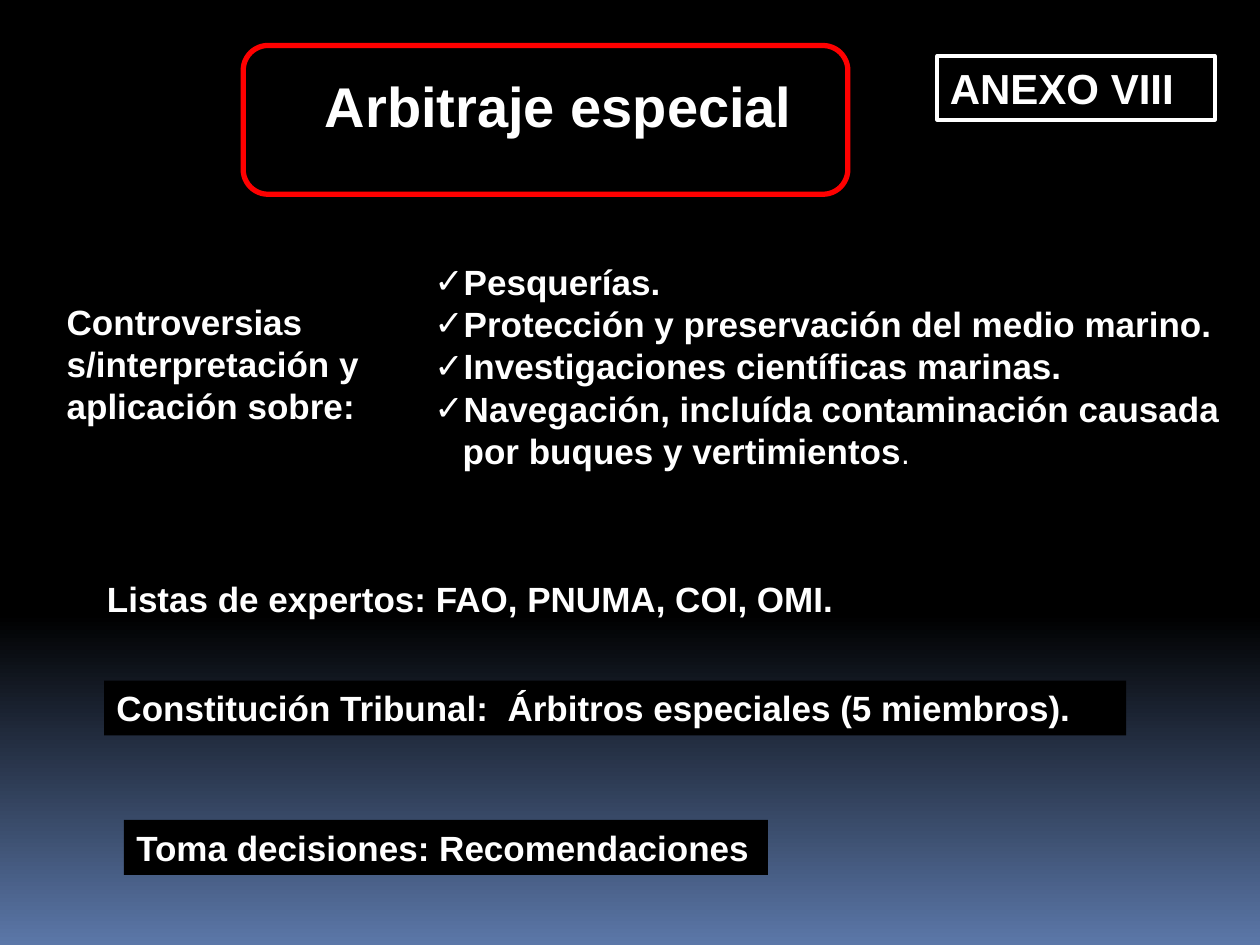
import copy

import pptx
import pptx.dml.color
import pptx.enum.shapes
import pptx.enum.text
import pptx.oxml
import pptx.oxml.ns
import pptx.util

Pt = pptx.util.Pt
SHAPES = pptx.enum.shapes.MSO_SHAPE
WHITE, BLACK, RED = "FFFFFF", "000000", "FF0000"


def color(hex_string):
    return pptx.dml.color.RGBColor.from_string(hex_string)


def format_text(shape, size, wrap=True):
    text_frame = shape.text_frame
    text_frame.word_wrap = wrap
    text_frame.auto_size = pptx.enum.text.MSO_AUTO_SIZE.NONE
    text_frame.vertical_anchor = pptx.enum.text.MSO_ANCHOR.TOP
    for paragraph in text_frame.paragraphs:
        paragraph.alignment = pptx.enum.text.PP_ALIGN.LEFT
        paragraph.space_before = Pt(0)
        for run in paragraph.runs:
            run.font.name = "Arial"
            run.font.size = Pt(size)
            run.font.bold = True
            run.font.color.rgb = color(WHITE)


presentation = pptx.Presentation()
presentation.slide_width, presentation.slide_height = Pt(720), Pt(540)
slide = presentation.slides.add_slide(presentation.slide_layouts[1])

# Background: black down to 65 %, then fading to blue
fill = slide.background.fill
fill.gradient()
fill.gradient_angle = 270
stop_list = slide.element.find(".//" + pptx.oxml.ns.qn("a:gsLst"))
stop_list.insert(1, copy.deepcopy(stop_list[0]))
for stop, (position, hex_string) in zip(
        fill.gradient_stops, [(0, BLACK), (0.65, BLACK), (1, "5B77A8")]):
    stop.position = position
    stop.color.rgb = color(hex_string)

# Title
title = slide.shapes.title
title.left, title.top, title.width, title.height = Pt(178.5), Pt(37.5), Pt(294.5), Pt(46)
title.text_frame.text = "Arbitraje especial"
format_text(title, 32)

# List of subjects
subjects = [
    "Pesquerías.",
    "Protección y preservación del medio marino.",
    "Investigaciones científicas marinas.",
    "Navegación, incluída contaminación causada",
    "por buques y vertimientos",
]
body = slide.placeholders[1]
body.left, body.top, body.width, body.height = Pt(241), Pt(145.5), Pt(479), Pt(127.5)
body.fill.solid()
body.fill.fore_color.rgb = color(BLACK)
body.text_frame.text = "\n".join(subjects)
body.text_frame.paragraphs[-1].add_run().text = "."
format_text(body, 20)
full_stop = body.text_frame.paragraphs[-1].runs[-1]
full_stop.font.size = Pt(18)
full_stop.font.bold = False

# Check marks; the last line continues the fourth item without one
namespace = pptx.oxml.ns.nsdecls("a")
for index, paragraph in enumerate(body.text_frame.paragraphs):
    properties = paragraph._p.get_or_add_pPr()
    properties.set("marL", str(Pt(16.2)))
    if index < len(subjects) - 1:
        properties.set("indent", str(-Pt(16.2)))
        bullet = f'<a:buChar {namespace} char="✓"/>'
    else:
        properties.set("indent", "0")
        bullet = f"<a:buNone {namespace}/>"
    properties.append(pptx.oxml.parse_xml(bullet))

# Frame around the title, and boxes: text, place, size, wrap, fill, line, line width
boxes = [
    (SHAPES.ROUNDED_RECTANGLE, "", (139, 26, 345.5, 85), 20, True, None, RED, 3),
    (SHAPES.RECTANGLE, "ANEXO VIII", (535.7, 32, 158.4, 36.5), 24, True, None, WHITE, 2.25),
    (SHAPES.RECTANGLE, "Constitución Tribunal:  Árbitros especiales (5 miembros).",
     (59.5, 389, 584, 31.3), 20, True, BLACK, None, 0),
    (SHAPES.RECTANGLE, "Toma decisiones: Recomendaciones",
     (70.8, 468.5, 368, 31.5), 20, False, BLACK, None, 0),
]
for kind, text, place, size, wrap, fill_color, line_color, line_width in boxes:
    shape = slide.shapes.add_shape(kind, *map(Pt, place))
    shape.shadow.inherit = False
    if fill_color:
        shape.fill.solid()
        shape.fill.fore_color.rgb = color(fill_color)
    else:
        shape.fill.background()
    if line_color:
        shape.line.color.rgb = color(line_color)
        shape.line.width = Pt(line_width)
    else:
        shape.line.fill.background()
    if text:
        shape.text_frame.text = text
        format_text(shape, size, wrap)

# Plain texts
texts = [
    ("Controversias s/interpretación y aplicación sobre:", (31, 168, 215, 80), True),
    ("Listas de expertos: FAO, PNUMA, COI, OMI.", (54, 326.5, 430, 31), False),
]
for text, place, wrap in texts:
    text_box = slide.shapes.add_textbox(*map(Pt, place))
    text_box.text_frame.text = text
    format_text(text_box, 20, wrap)

presentation.save("out.pptx")
